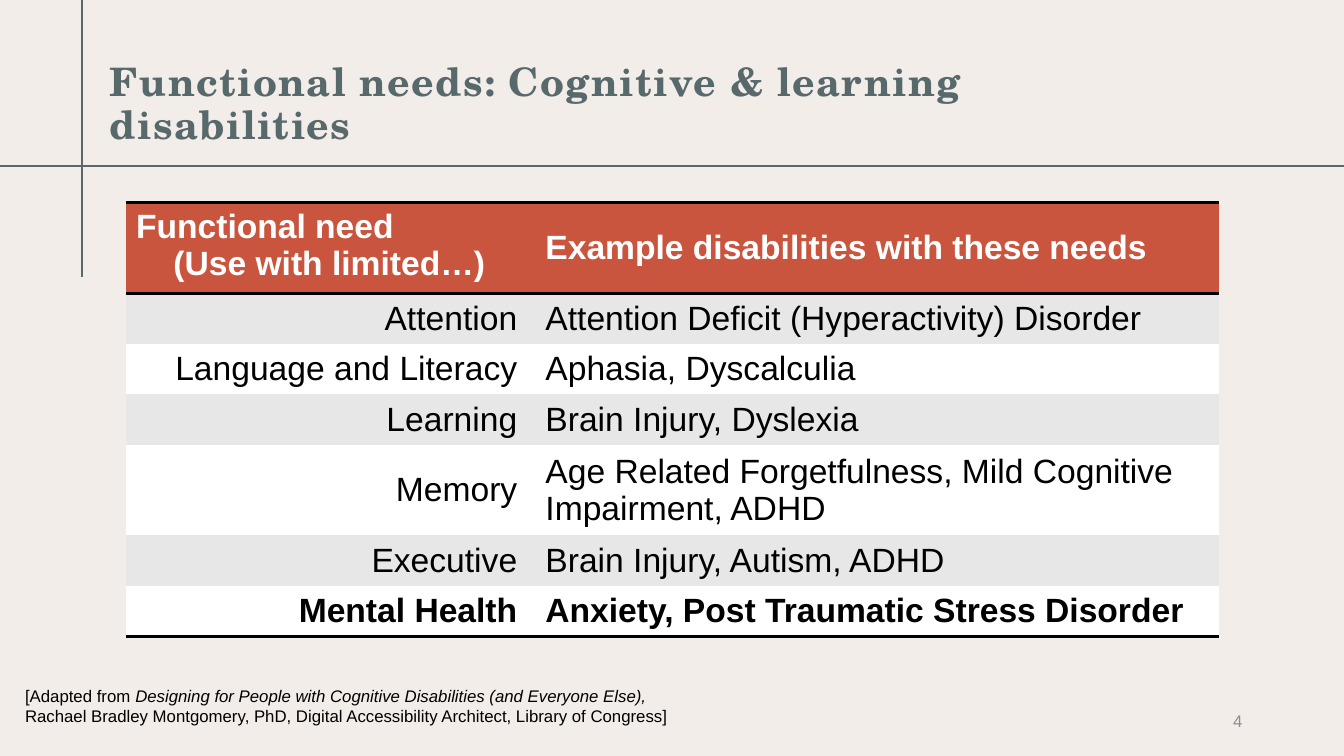
from dataclasses import dataclass

from pptx import Presentation
from pptx.dml.color import RGBColor
from pptx.enum.shapes import MSO_CONNECTOR as Connector
from pptx.enum.text import MSO_ANCHOR as Anchor, MSO_AUTO_SIZE as AutoSize, PP_ALIGN as Align
from pptx.oxml.ns import qn
from pptx.oxml.xmlchemy import OxmlElement
from pptx.slide import Slide
from pptx.table import _Cell as Cell
from pptx.text.text import _Paragraph as Paragraph
from pptx.util import Inches, Pt

PLAIN_TABLE_STYLE = "{2D5ABB26-0587-4C30-8999-92F81FD0307C}"


@dataclass(frozen=True)
class Theme:
    background: str = "F3EDEA"
    slate: str = "58696B"
    header: str = "CA553E"
    band: str = "E7E7E7"
    white: str = "FFFFFF"
    black: str = "000000"
    grey: str = "8C8C8C"
    title_font: str = "TeX Gyre Schola"
    body_font: str = "Arial"
    title_size: float = 28
    table_size: float = 24
    small_size: float = 12
    guide_width: float = 1.5
    border_width: float = 2


@dataclass(frozen=True)
class Guide:
    start: tuple[float, float]
    end: tuple[float, float]


@dataclass(frozen=True)
class NeedRow:
    need: str
    examples: str
    height: float = 0.5
    bold: bool = False


THEME = Theme()
GUIDES = [Guide((0, 1.65), (13.33, 1.65)), Guide((0.81, 0), (0.81, 2.75))]
COLUMN_WIDTHS = (3.98, 6.86)
ROWS = [
    NeedRow("Functional need\n(Use with limited…)", "Example disabilities with these needs", 0.9, True),
    NeedRow("Attention", "Attention Deficit (Hyperactivity) Disorder"),
    NeedRow("Language and Literacy", "Aphasia, Dyscalculia"),
    NeedRow("Learning", "Brain Injury, Dyslexia"),
    NeedRow("Memory", "Age Related Forgetfulness, Mild Cognitive\nImpairment, ADHD", 0.9),
    NeedRow("Executive", "Brain Injury, Autism, ADHD"),
    NeedRow("Mental Health", "Anxiety, Post Traumatic Stress Disorder", bold=True),
]


def rgb(value: str) -> RGBColor:
    return RGBColor.from_string(value)


def format_runs(paragraph: Paragraph, size: float, color: str,
                font: str = THEME.body_font, bold: bool = False) -> None:
    for run in paragraph.runs:
        run.font.name = font
        run.font.size = Pt(size)
        run.font.bold = bold
        run.font.color.rgb = rgb(color)


def add_guide(slide: Slide, guide: Guide) -> None:
    line = slide.shapes.add_connector(
        Connector.STRAIGHT, *map(Inches, guide.start + guide.end))
    line.line.color.rgb = rgb(THEME.slate)
    line.line.width = Pt(THEME.guide_width)
    line._element.spPr.append(OxmlElement("a:effectLst"))


def add_title(slide: Slide, text: str) -> None:
    title = slide.shapes.title
    title.left, title.top, title.width, title.height = map(Inches, (0.99, 0.79, 10.62, 0.51))
    frame = title.text_frame
    frame.text = text
    frame.word_wrap = True
    frame.auto_size = AutoSize.NONE
    frame.vertical_anchor = Anchor.MIDDLE
    paragraph = frame.paragraphs[0]
    paragraph.alignment = Align.LEFT
    paragraph.line_spacing = 0.9
    format_runs(paragraph, THEME.title_size, THEME.slate, THEME.title_font, True)
    for run in paragraph.runs:
        run._r.get_or_add_rPr().set("spc", "100")


def add_border(cell: Cell, tag: str) -> None:
    """Add one edge; must precede the cell fill and run top before bottom."""
    line = OxmlElement(tag)
    line.set("w", str(Pt(THEME.border_width)))
    fill = OxmlElement("a:solidFill")
    color = OxmlElement("a:srgbClr")
    color.set("val", THEME.black)
    fill.append(color)
    line.append(fill)
    cell._tc.get_or_add_tcPr().append(line)


def fill_cell(cell: Cell, text: str, row: int, column: int) -> None:
    is_header = row == 0
    if is_header:
        add_border(cell, "a:lnT")
    if is_header or row == len(ROWS) - 1:
        add_border(cell, "a:lnB")
    fill = THEME.header if is_header else (THEME.band if row % 2 else THEME.white)
    cell.fill.solid()
    cell.fill.fore_color.rgb = rgb(fill)
    cell.text_frame.text = text
    cell.vertical_anchor = Anchor.TOP if is_header and column == 0 else Anchor.MIDDLE
    cell.margin_left = Inches(0.18 if column else 0.1)
    for paragraph in cell.text_frame.paragraphs:
        paragraph.alignment = Align.LEFT if is_header or column else Align.RIGHT
        format_runs(paragraph, THEME.table_size,
                    THEME.white if is_header else THEME.black, bold=ROWS[row].bold)


def add_needs_table(slide: Slide) -> None:
    height = sum(row.height for row in ROWS)
    frame = slide.shapes.add_table(
        len(ROWS), len(COLUMN_WIDTHS), Inches(1.25), Inches(2.01),
        Inches(sum(COLUMN_WIDTHS)), Inches(height))
    table = frame.table
    table._tbl.tblPr.find(qn("a:tableStyleId")).text = PLAIN_TABLE_STYLE
    for column, width in zip(table.columns, COLUMN_WIDTHS):
        column.width = Inches(width)
    for index, row in enumerate(ROWS):
        table.rows[index].height = Inches(row.height)
        for column, text in enumerate((row.need, row.examples)):
            fill_cell(table.cell(index, column), text, index, column)
    limited_use = table.cell(0, 0).text_frame.paragraphs[1]
    limited_use._p.get_or_add_pPr().set("marL", str(Inches(0.37)))


def add_text_box(slide: Slide, box: tuple[float, float, float, float],
                 parts: list[str], color: str) -> Paragraph:
    """Add a small wrapped paragraph with one run for each part."""
    frame = slide.shapes.add_textbox(*map(Inches, box)).text_frame
    frame.word_wrap = True
    paragraph = frame.paragraphs[0]
    for part in parts:
        paragraph.add_run().text = part
    format_runs(paragraph, THEME.small_size, color)
    return paragraph


def add_source_note(slide: Slide) -> None:
    note = add_text_box(slide, (0.15, 6.75, 6.61, 0.5), [
        "[Adapted from ",
        "Designing for People with Cognitive Disabilities (and Everyone Else), ",
        "Rachael Bradley Montgomery, PhD, Digital Accessibility Architect, Library of Congress]",
    ], THEME.black)
    note.runs[1].font.italic = True


def add_page_number(slide: Slide, number: int) -> None:
    paragraph = add_text_box(slide, (9.42, 6.95, 3, 0.4), [str(number)], THEME.grey)
    paragraph.alignment = Align.RIGHT
    slide.shapes[-1].text_frame.vertical_anchor = Anchor.MIDDLE


def main() -> None:
    presentation = Presentation()
    presentation.slide_width, presentation.slide_height = Inches(13.33), Inches(7.5)
    slide = presentation.slides.add_slide(presentation.slide_layouts.get_by_name("Title Only"))
    slide.background.fill.solid()
    slide.background.fill.fore_color.rgb = rgb(THEME.background)
    for guide in GUIDES:
        add_guide(slide, guide)
    add_title(slide, "Functional needs: Cognitive & learning disabilities")
    add_source_note(slide)
    add_page_number(slide, 4)
    add_needs_table(slide)
    presentation.save("out.pptx")


if __name__ == "__main__":
    main()
